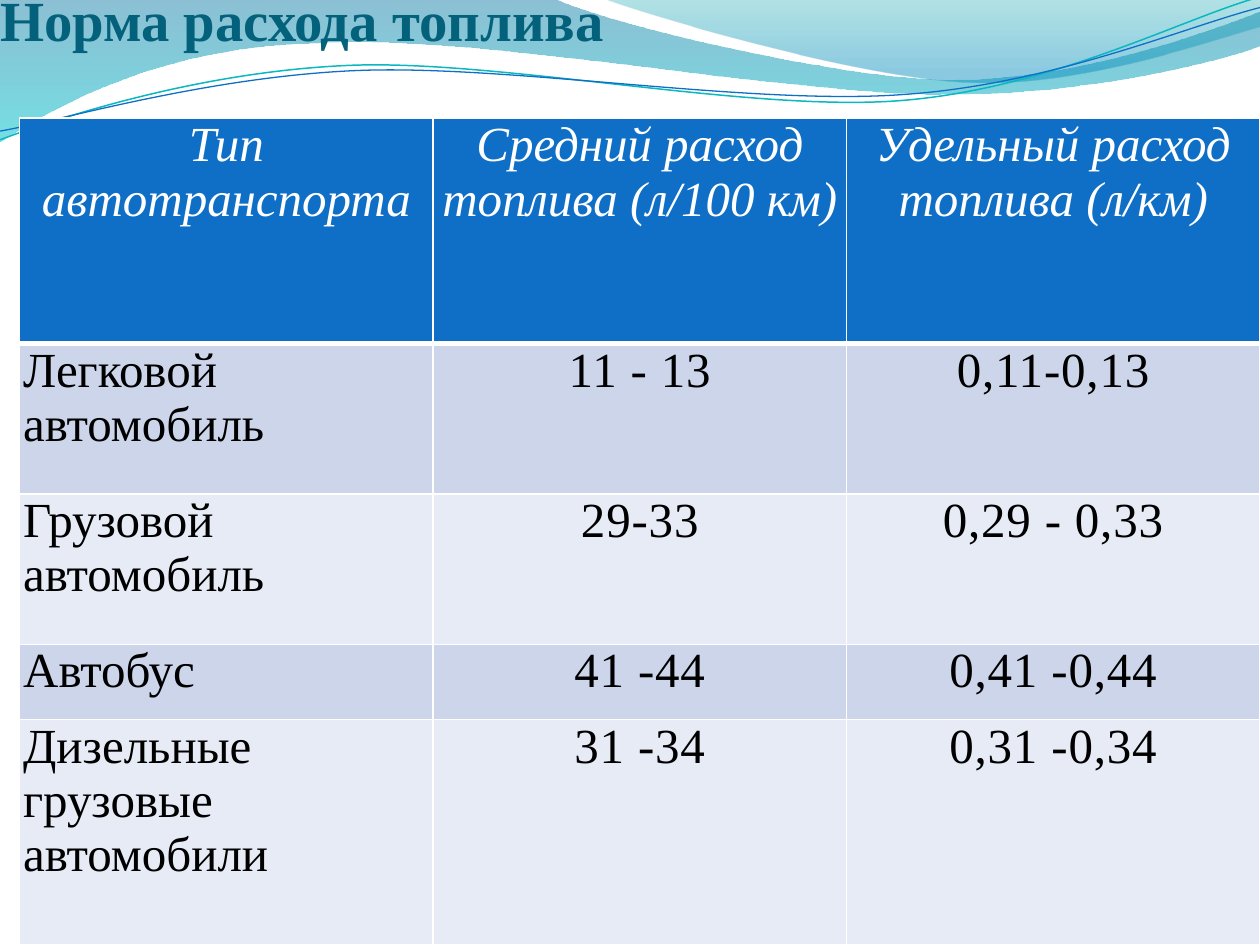
from copy import deepcopy
from dataclasses import dataclass

from lxml import etree
from pptx import Presentation
from pptx.dml.color import RGBColor
from pptx.enum import text as t
from pptx.oxml import ns
from pptx.util import Pt


@dataclass(frozen=True)
class Theme:
    font: str = "Times New Roman"
    title_size: float = 32.4
    title_end_size: float = 36
    table_size: float = 28
    title: str = "04617B"
    header: str = "0F6FC6"
    bands: tuple = ("CCD5EA", "E7EBF5")
    white: str = "FFFFFF"
    black: str = "000000"
    teal: str = "0AB8BF"


THEME = Theme()
WIDTH, HEIGHT = 720, 540
COL_WIDTH, ROW_UNIT = 236.25, 42.95
ROW_UNITS = (3, 2, 2, 1, 3)
ROWS = (
    ("Тип автотранспорта", "Средний расход топлива (л/100 км)", "Удельный расход топлива (л/км)"),
    ("Легковой автомобиль", "11 - 13", "0,11-0,13"),
    ("Грузовой автомобиль", "29-33", "0,29 - 0,33"),
    ("Автобус", "41 -44", "0,41 -0,44"),
    ("Дизельные грузовые автомобили", "31 -34", "0,31 -0,34"),
)

# Each wave is a list of chains: a start point, then three points per Bézier curve.
# Straight lines join one chain to the next.
WIDE_WAVE = [
    [(0, 0)],
    [(316.8, -0.7), (342.7, 12.2), (478.1, 45.4), (545.8, 45.4),
     (614.2, 45.4), (689.8, 18.7), (720, 6.5)],
    [(720.7, 25.9), (707.8, 31.7), (626.4, 54.7), (537.1, 54),
     (447.8, 54), (275, 20.2), (185, 24.5),
     (92.9, 25.9), (33.1, 59.8), (-0.7, 81.4)],
]
RIGHT_WAVE = [
    [(344.9, -0.7), (366.5, 7.9), (491, 44.6), (553.7, 46.8),
     (616.3, 49.7), (691.9, 23), (720, 15.1)],
    [(720, 0)],
]
TEAL_LINE = [
    [(0, 79.9), (34.6, 67), (113.8, 41), (199.4, 37.4),
     (284.4, 33.8), (427, 64.1), (513.4, 57.6),
     (599.8, 51.1), (675.4, 10.8), (718.6, -1.4)],
]
BLUE_LINE = [
    [(0, 74.9), (33.8, 69.1), (118.1, 43.9), (203.8, 40.3),
     (290.2, 36.7), (429.8, 60.5), (516.2, 54),
     (601.9, 48.2), (677.5, 15.1), (720, 4.3)],
]


def rgb(value):
    return RGBColor.from_string(value)


def curve_chains(sp, chains):
    """Merge every three segments inside a chain into one Bézier curve."""
    outline = next(sp._element.iter(ns.qn("a:path")))
    segments = list(outline)
    start = 0
    for chain in chains:
        for i in range(start + 1, start + len(chain), 3):
            curve = etree.Element(ns.qn("a:cubicBezTo"))
            segments[i].addprevious(curve)
            for segment in segments[i:i + 3]:
                curve.append(segment[0])
                outline.remove(segment)
        start += len(chain)


def add_wave(s, chains, close):
    points = [(Pt(x), Pt(y)) for chain in chains for x, y in chain]
    builder = s.shapes.build_freeform(*points[0])
    builder.add_line_segments(points[1:], close=close)
    sp = builder.convert_to_shape()
    curve_chains(sp, chains)
    sp.shadow.inherit = False
    return sp


def add_filled_wave(s, chains, stops):
    """Fill from top to bottom; stops are (position, colour, opacity in percent)."""
    sp = add_wave(s, chains, close=True)
    sp.line.fill.background()
    sp.fill.gradient()
    sp.fill.gradient_angle = 270
    for stop, (position, color, opacity) in zip(sp.fill.gradient_stops, stops):
        stop.position = position
        stop.color.rgb = rgb(color)
        clr = stop._gs.find(ns.qn("a:srgbClr"))
        etree.SubElement(clr, ns.qn("a:alpha")).set("val", str(opacity * 1000))


def add_line_wave(s, chains, color, width):
    sp = add_wave(s, chains, close=False)
    sp.fill.background()
    sp.line.color.rgb = rgb(color)
    sp.line.width = Pt(width)


def write(tf, text, size, color, bold=False, italic=False, align=t.PP_ALIGN.LEFT, spacing=0):
    p = tf.paragraphs[0]
    p.alignment = align
    r = p.add_run()
    r.text = text
    r.font.name = THEME.font
    r.font.size = Pt(size)
    r.font.bold = bold
    r.font.italic = italic
    r.font.color.rgb = rgb(color)
    if spacing:
        r.font._element.set("spc", str(int(spacing * 100)))
    return r


def end_with_break(p, r, size):
    """Close the paragraph with a line break in the run's format at the given size."""
    p.add_line_break()
    props = deepcopy(r.font._element)
    props.set("sz", str(int(size * 100)))
    p._p[-1].append(props)
    end = etree.SubElement(p._p, ns.qn("a:endParaRPr"), dict(props.attrib))
    end.extend(deepcopy(list(props)))


def format_title(s):
    title = s.shapes.title
    title.left, title.top, title.width, title.height = Pt(0), Pt(0), Pt(WIDTH), Pt(73.5)
    tf = title.text_frame
    tf.margin_left = tf.margin_right = tf.margin_bottom = 0
    tf.margin_top = Pt(3.6)
    tf.vertical_anchor = t.MSO_ANCHOR.BOTTOM
    tf.auto_size = t.MSO_AUTO_SIZE.NONE
    tf.word_wrap = True
    r = write(tf, "Норма расхода топлива", THEME.title_size, THEME.title, bold=True)
    end_with_break(tf.paragraphs[0], r, THEME.title_end_size)
    # Bring the title in front of the waves.
    title._element.getparent().append(title._element)


def set_borders(cell, top=1, bottom=1):
    widths = {"a:lnL": 1, "a:lnR": 1, "a:lnT": top, "a:lnB": bottom}
    tc_pr = cell._tc.get_or_add_tcPr()
    for i, (tag, width) in enumerate(widths.items()):
        ln = etree.Element(ns.qn(tag), w=str(Pt(width)))
        fill = etree.SubElement(ln, ns.qn("a:solidFill"))
        etree.SubElement(fill, ns.qn("a:srgbClr"), val=THEME.white)
        tc_pr.insert(i, ln)


def format_cell(cell, text, row, col):
    header = row == 0
    cell.fill.solid()
    cell.fill.fore_color.rgb = rgb(THEME.header if header else THEME.bands[(row - 1) % 2])
    cell.margin_left = cell.margin_right = Pt(2)
    cell.margin_top = cell.margin_bottom = 0
    set_borders(cell, top=3 if row == 1 else 1, bottom=3 if header else 1)
    centred = header or col > 0
    write(cell.text_frame, text, THEME.table_size,
          THEME.white if header else THEME.black, italic=header,
          align=t.PP_ALIGN.CENTER if centred else t.PP_ALIGN.LEFT,
          spacing=0.5 if centred and not header else 0)


def add_fuel_table(s):
    cols = len(ROWS[0])
    width, height = COL_WIDTH * cols, ROW_UNIT * sum(ROW_UNITS)
    table = s.shapes.add_table(len(ROWS), cols, Pt(WIDTH - width), Pt(HEIGHT - height),
                               Pt(width), Pt(height)).table
    table.horz_banding = False
    for column in table.columns:
        column.width = Pt(COL_WIDTH)
    for i, (units, texts) in enumerate(zip(ROW_UNITS, ROWS)):
        table.rows[i].height = Pt(units * ROW_UNIT)
        for j, text in enumerate(texts):
            format_cell(table.cell(i, j), text, i, j)


def main():
    prs = Presentation()
    prs.slide_width, prs.slide_height = Pt(WIDTH), Pt(HEIGHT)
    s = prs.slides.add_slide(prs.slide_layouts[5])
    add_filled_wave(s, WIDE_WAVE, [(0, "0074A1", 45), (1, "00C6CF", 55)])
    add_filled_wave(s, RIGHT_WAVE, [(0, "00A1A9", 30), (0.8, "008BBF", 45)])
    add_line_wave(s, TEAL_LINE, THEME.teal, 0.85)
    add_line_wave(s, BLUE_LINE, THEME.header, 0.75)
    format_title(s)
    add_fuel_table(s)
    prs.save("out.pptx")


if __name__ == "__main__":
    main()
